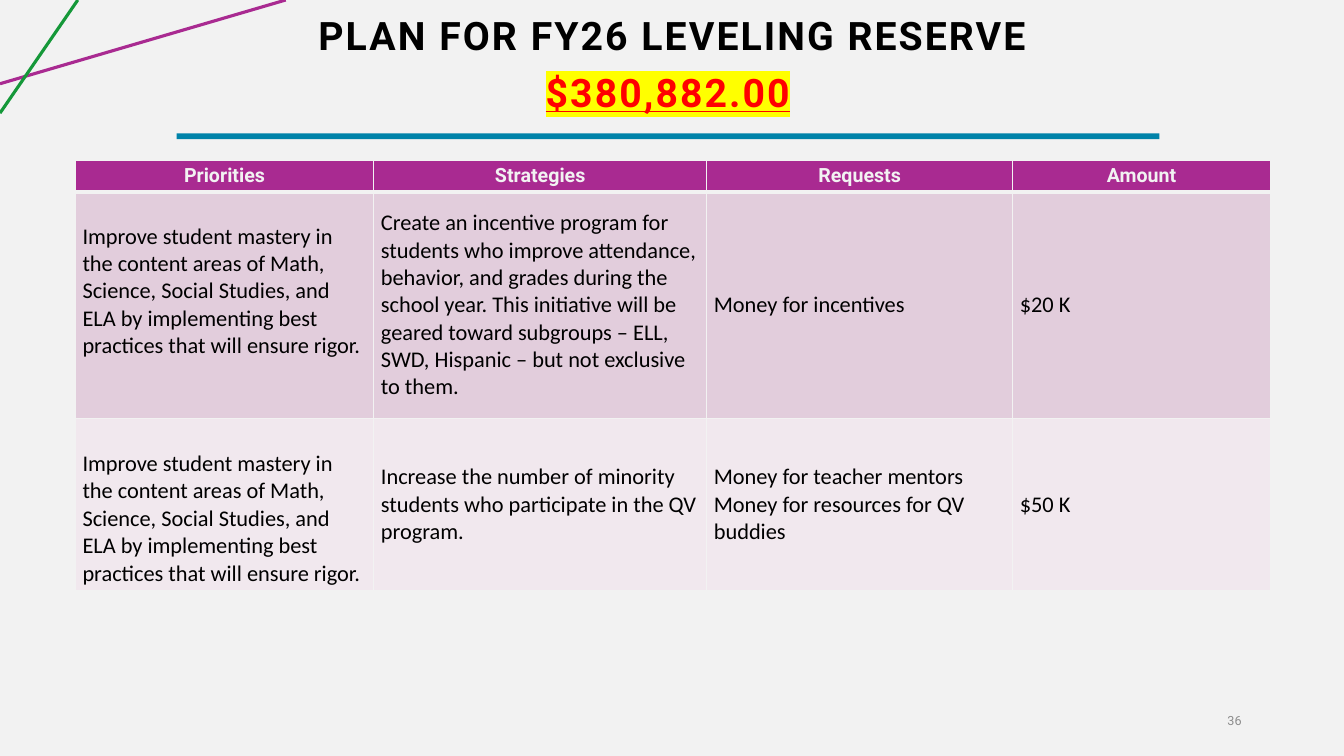
from lxml import etree
from pptx import Presentation
from pptx.dml.color import RGBColor
from pptx.enum.shapes import MSO_CONNECTOR as Connector, MSO_SHAPE as Shape
from pptx.enum.text import MSO_ANCHOR as Anchor, PP_ALIGN as Align
from pptx.oxml.ns import qn
from pptx.util import Cm, Pt

PALE, PURPLE, GREEN, TEAL = "F2F2F2", "A92A91", "159839", "0083A9"
BLACK, RED, YELLOW, GRAY = "000000", "FF0000", "FFFF00", "8C8C8C"

TITLE = "PLAN FOR FY26 LEVELING RESERVE"
RESERVE = "$380,882.00"
PAGE = "36"
HEADERS = ["Priorities", "Strategies", "Requests", "Amount"]
MASTERY = ("Improve student mastery in the content areas of Math, Science, "
           "Social Studies, and ELA by implementing best practices that will ensure rigor.")
PLANS = [
    [[MASTERY],
     ["Create an incentive program for students who improve attendance, behavior, "
      "and grades during the school year. This initiative will be geared toward "
      "subgroups – ELL, SWD, Hispanic – but not exclusive to them."],
     ["Money for incentives"], ["$20 K"]],
    [[MASTERY],
     ["Increase the number of minority students who participate in the QV program."],
     ["Money for teacher mentors", "Money for resources for QV buddies"], ["$50 K"]],
]
ROW_FILLS = [PURPLE, "E2CDDC", "F1E8EE"]
COLUMN_WIDTHS = [7.52, 8.39, 7.71, 6.5]
ROW_HEIGHTS = [0.77, 5.71, 4.33]
PRIORITY_MARGINS = {1: (0.1, 0.8), 2: (0.8, 0.1)}
CORNER_LINES = [((0, 2.11), (7.2, 0), PURPLE), ((1.96, 0), (0, 2.85), GREEN)]


def color(value):
    return RGBColor.from_string(value)


def write(paragraph, text, size, tint, font="Roboto", bold=False, align=Align.LEFT):
    paragraph.alignment = align
    run = paragraph.add_run()
    run.text = text
    run.font.size = Pt(size)
    run.font.name = font
    run.font.bold = bold
    run.font.color.rgb = color(tint)
    return run


def add_text(slide, box, text, size, tint, bold, align, spacing=1.0):
    frame = slide.shapes.add_textbox(*map(Cm, box)).text_frame
    frame.word_wrap = True
    frame.vertical_anchor = Anchor.MIDDLE
    frame.paragraphs[0].line_spacing = spacing
    return write(frame.paragraphs[0], text, size, tint, bold=bold, align=align)


def add_heading(slide, box, text, tint):
    run = add_text(slide, box, text, 28, tint, True, Align.CENTER, 0.9)
    run.font._element.set("spc", "150")
    return run


def highlight(run, tint):
    mark = etree.Element(qn("a:highlight"))
    etree.SubElement(mark, qn("a:srgbClr"), val=tint)
    run.font._element.find(qn("a:solidFill")).addnext(mark)


def add_borders(cell, bottom_width):
    properties = cell._tc.get_or_add_tcPr()
    widths = {"a:lnL": 1, "a:lnR": 1, "a:lnT": 1, "a:lnB": bottom_width}
    for index, (tag, width) in enumerate(widths.items()):
        border = etree.Element(qn(tag), w=str(Pt(width)))
        fill = etree.SubElement(border, qn("a:solidFill"))
        etree.SubElement(fill, qn("a:srgbClr"), val=PALE)
        properties.insert(index, border)


def fill_cell(cell, row, column):
    is_header = row == 0
    cell.fill.solid()
    cell.fill.fore_color.rgb = color(ROW_FILLS[row])
    cell.vertical_anchor = Anchor.MIDDLE
    cell.margin_left = cell.margin_right = Cm(0.18)
    top, bottom = PRIORITY_MARGINS.get(row, (0.1, 0.1)) if column == 0 else (0.1, 0.1)
    cell.margin_top, cell.margin_bottom = Cm(top), Cm(bottom)
    add_borders(cell, 3 if is_header else 1)
    frame = cell.text_frame
    if is_header:
        write(frame.paragraphs[0], HEADERS[column], 14, PALE, bold=True, align=Align.CENTER)
        return
    for index, line in enumerate(PLANS[row - 1][column]):
        paragraph = frame.add_paragraph() if index else frame.paragraphs[0]
        write(paragraph, line, 16, BLACK, font="Calibri")


def add_plan_table(slide):
    table = slide.shapes.add_table(
        len(ROW_HEIGHTS), len(COLUMN_WIDTHS), Cm(1.9), Cm(4.04),
        Cm(sum(COLUMN_WIDTHS)), Cm(sum(ROW_HEIGHTS))).table
    for column, width in enumerate(COLUMN_WIDTHS):
        table.columns[column].width = Cm(width)
    for row, height in enumerate(ROW_HEIGHTS):
        table.rows[row].height = Cm(height)
        for column in range(len(COLUMN_WIDTHS)):
            fill_cell(table.cell(row, column), row, column)


def add_corner_line(slide, start, end, tint):
    line = slide.shapes.add_connector(Connector.STRAIGHT, *map(Cm, start + end))
    line.line.color.rgb = color(tint)
    line.line.width = Pt(2.25)
    etree.SubElement(line._element.spPr, qn("a:effectLst"))


def main():
    presentation = Presentation()
    presentation.slide_width, presentation.slide_height = Cm(33.87), Cm(19.05)
    slide = presentation.slides.add_slide(presentation.slide_layouts[6])
    slide.background.fill.solid()
    slide.background.fill.fore_color.rgb = color(PALE)

    for start, end, tint in CORNER_LINES:
        add_corner_line(slide, start, end, tint)
    add_text(slide, (28.8, 17.65, 2.74, 1.02), PAGE, 9, GRAY, False, Align.RIGHT)
    add_heading(slide, (2.34, 0.1, 29.21, 1.73), TITLE, BLACK)
    add_plan_table(slide)
    reserve = add_heading(slide, (3.84, 1.22, 25.98, 2.34), RESERVE, RED)
    reserve.font.underline = True
    highlight(reserve, YELLOW)

    divider = slide.shapes.add_shape(Shape.RECTANGLE, Cm(4.45), Cm(3.36), Cm(24.77), Cm(0.15))
    divider.shadow.inherit = False
    divider.fill.solid()
    divider.fill.fore_color.rgb = color(TEAL)
    divider.line.fill.background()

    presentation.save("out.pptx")


if __name__ == "__main__":
    main()
